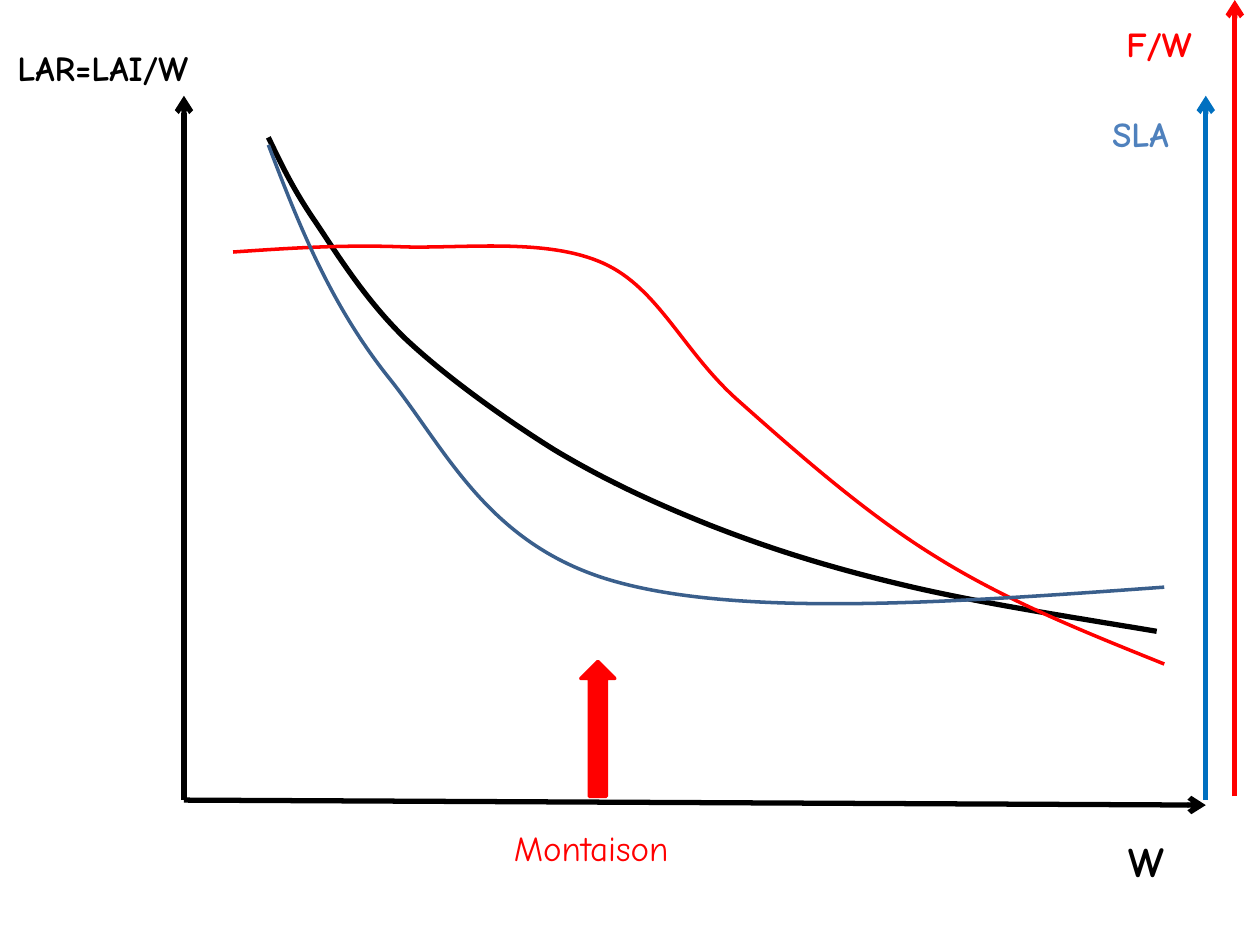
from lxml import etree
from pptx import Presentation
from pptx.dml.color import RGBColor
from pptx.enum import shapes, text
from pptx.oxml import ns
from pptx.util import Inches, Pt

BLACK = RGBColor(0x00, 0x00, 0x00)
RED = RGBColor(0xFF, 0x00, 0x00)
BLUE = RGBColor(0x00, 0x70, 0xC0)
SKY = RGBColor(0x4F, 0x81, 0xBD)
NAVY = RGBColor(0x3A, 0x5F, 0x8C)

deck = Presentation()
deck.slide_width, deck.slide_height = Inches(10), Inches(7.5)
slide = deck.slides.add_slide(deck.slide_layouts[6])


def label(words, left, top, width, height=0.44, size=20, color=BLACK, bold=True):
    box = slide.shapes.add_textbox(*map(Inches, (left, top, width, height)))
    frame = box.text_frame
    frame.word_wrap = False
    frame.auto_size = text.MSO_AUTO_SIZE.SHAPE_TO_FIT_TEXT
    run = frame.paragraphs[0].add_run()
    run.text = words
    run.font.name = "Comic Neue"
    run.font.size = Pt(size)
    run.font.bold = bold
    run.font.color.rgb = color


def curve(points, color, width):
    """Draw a start point followed by three Bezier points per segment."""
    spots = [(Inches(x), Inches(y)) for x, y in points]
    build = slide.shapes.build_freeform(*spots[0])
    build.add_line_segments(spots[1:], close=False)
    shape = build.convert_to_shape()
    shape.shadow.inherit = False
    shape.fill.background()
    shape.line.color.rgb = color
    shape.line.width = Pt(width)
    # Merge every three straight steps into one cubic segment
    steps = list(shape.element.iter(ns.qn("a:lnTo")))
    for i in range(0, len(steps), 3):
        bend = etree.Element(ns.qn("a:cubicBezTo"))
        steps[i].addprevious(bend)
        for step in steps[i:i + 3]:
            bend.append(step[0])
            step.getparent().remove(step)


# Axes
for start, end, color in [
    ((1.46, 6.35), (9.57, 6.39), BLACK),
    ((1.46, 6.35), (1.46, 0.76), BLACK),
    ((9.57, 6.35), (9.57, 0.76), BLUE),
    ((9.8, 6.32), (9.8, 0), RED),
]:
    axis = slide.shapes.add_connector(
        shapes.MSO_CONNECTOR.STRAIGHT, *map(Inches, start + end))
    axis.line.color.rgb = color
    axis.line.width = Pt(3)
    etree.SubElement(axis.line._get_or_add_ln(), ns.qn("a:tailEnd"), type="arrow")
    etree.SubElement(axis.element.spPr, ns.qn("a:effectLst"))

# LAR, F/W and SLA against W
curve([(2.13, 1.09), (2.23, 1.3), (2.33, 1.51), (2.51, 1.77),
       (2.69, 2.04), (2.91, 2.39), (3.22, 2.69),
       (3.54, 2.99), (4, 3.32), (4.4, 3.57),
       (4.8, 3.81), (5.19, 3.99), (5.64, 4.17),
       (6.1, 4.35), (6.57, 4.5), (7.16, 4.64),
       (7.74, 4.78), (8.46, 4.89), (9.18, 5.01)], BLACK, 3)
curve([(1.85, 2), (2.29, 1.97), (2.73, 1.94), (3.22, 1.96),
       (3.71, 1.97), (4.35, 1.89), (4.79, 2.09),
       (5.23, 2.29), (5.42, 2.79), (5.86, 3.18),
       (6.3, 3.57), (6.86, 4.07), (7.43, 4.42),
       (7.99, 4.77), (8.62, 5.02), (9.24, 5.27)], RED, 2)
curve([(2.13, 1.15), (2.37, 1.78), (2.62, 2.41), (3.08, 2.99),
       (3.54, 3.56), (3.87, 4.34), (4.9, 4.62),
       (5.92, 4.9), (7.58, 4.78), (9.24, 4.66)], NAVY, 2)

# Stage marker
arrow = slide.shapes.add_shape(
    shapes.MSO_SHAPE.UP_ARROW, *map(Inches, (4.61, 5.25, 0.27, 1.07)))
arrow.shadow.inherit = False
arrow.fill.solid()
arrow.fill.fore_color.rgb = RED
arrow.line.color.rgb = RED
arrow.line.width = Pt(2)

label("LAR=LAI/W", 0.04, 0.32, 1.86)
label("W", 8.86, 6.58, 0.55, height=0.5, size=24)
label("F/W", 8.84, 0.13, 0.81, color=RED)
label("SLA", 8.73, 0.84, 0.76, color=SKY)
label("Montaison", 3.98, 6.51, 1.53, color=RED, bold=False)

deck.save("out.pptx")
